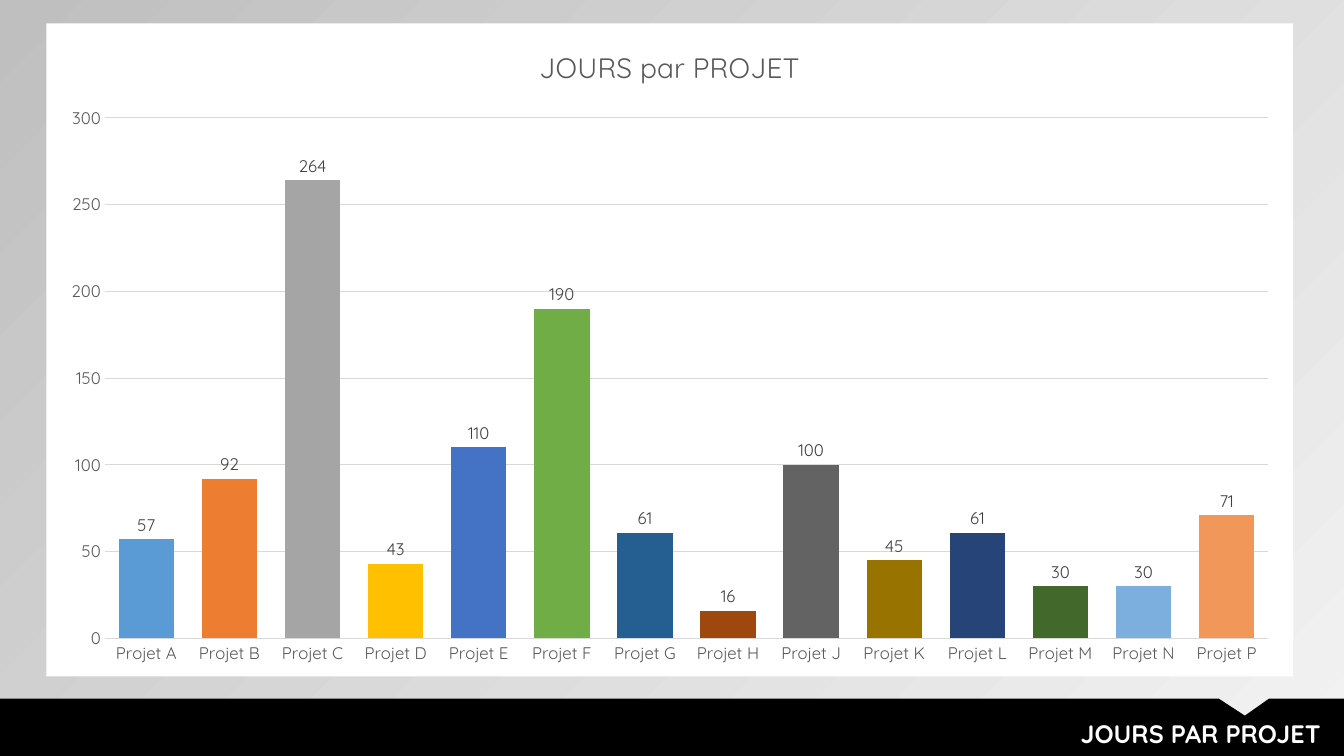
import pptx
import pptx.chart.data
import pptx.dml.color
import pptx.enum.chart
import pptx.enum.text
import pptx.oxml
import pptx.oxml.ns
import pptx.util

Pt = pptx.util.Pt

FONT = "Quicksand"
CHART_TITLE = "JOURS par PROJET"
FOOTER = "JOURS PAR PROJET"
PROJECTS = [
    ("Projet A", 57, "5B9BD5"),
    ("Projet B", 92, "ED7D31"),
    ("Projet C", 264, "A5A5A5"),
    ("Projet D", 43, "FFC000"),
    ("Projet E", 110, "4472C4"),
    ("Projet F", 190, "70AD47"),
    ("Projet G", 61, "255E91"),
    ("Projet H", 16, "9E480E"),
    ("Projet J", 100, "636363"),
    ("Projet K", 45, "997300"),
    ("Projet L", 61, "264478"),
    ("Projet M", 30, "43682B"),
    ("Projet N", 30, "7CAFDD"),
    ("Projet P", 71, "F1975A"),
]
COLORS = {
    "light": "F2F2F2", "dark": "BFBFBF", "band": "000000", "white": "FFFFFF",
    "axis": "595959", "grid": "D9D9D9", "label": "404040",
}
WIDTH, HEIGHT = 960, 540
BAND_TOP = 499
NOTCH = [(870.5, BAND_TOP), (889.2, 511.2), (906.5, BAND_TOP)]
CHART_BOX = (33.1, 16.6, 890.6, 466.6)
FOOTER_BOX = (298, 509.8, 652.4, 28.8)


def rgb(name):
    return pptx.dml.color.RGBColor.from_string(COLORS.get(name, name))


def set_font(font, size, color, bold=False):
    font.name, font.size, font.bold = FONT, Pt(size), bold
    font.color.rgb = rgb(color)


def set_line(line, color):
    line.color.rgb = rgb(color)
    line.width = Pt(0.75)


def add_background(slide):
    fill = slide.background.fill
    fill.gradient()
    fill.gradient_angle = 135
    for stop, position, color in zip(fill.gradient_stops, (0, 1), ("light", "dark")):
        stop.position = position
        stop.color.rgb = rgb(color)


def add_band(slide):
    """Draw the footer band with a notch in its top edge."""
    outline = NOTCH + [(WIDTH, BAND_TOP), (WIDTH, HEIGHT), (0, HEIGHT)]
    builder = slide.shapes.build_freeform(0, Pt(BAND_TOP))
    builder.add_line_segments([(Pt(x), Pt(y)) for x, y in outline], close=True)
    sp = builder.convert_to_shape()
    sp.shadow.inherit = False
    sp.fill.solid()
    sp.fill.fore_color.rgb = rgb("band")
    sp.line.fill.background()


def add_footer(slide):
    tf = slide.shapes.add_textbox(*map(Pt, FOOTER_BOX)).text_frame
    tf.word_wrap = True
    p = tf.paragraphs[0]
    p.text = FOOTER
    p.alignment = pptx.enum.text.PP_ALIGN.RIGHT
    set_font(p.runs[0].font, 18, "white", bold=True)


def fill_chart_area(chart, color):
    sp_pr = pptx.oxml.parse_xml(
        f'<c:spPr {pptx.oxml.ns.nsdecls("c", "a")}><a:solidFill>'
        f'<a:srgbClr val="{COLORS[color]}"/></a:solidFill>'
        '<a:ln><a:noFill/></a:ln></c:spPr>')
    chart._chartSpace.find(pptx.oxml.ns.qn("c:chart")).addnext(sp_pr)


def add_days_chart(slide):
    names, days, bar_colors = zip(*PROJECTS)
    data = pptx.chart.data.CategoryChartData()
    data.categories = names
    data.add_series("Jours", days)
    chart = slide.shapes.add_chart(
        pptx.enum.chart.XL_CHART_TYPE.COLUMN_CLUSTERED,
        *map(Pt, CHART_BOX), data).chart
    set_font(chart.font, 10, "band")
    fill_chart_area(chart, "white")
    chart.has_legend = False
    chart.has_title = True
    p = chart.chart_title.text_frame.paragraphs[0]
    p.text = CHART_TITLE
    set_font(p.runs[0].font, 20, "axis")
    chart.chart_title.include_in_layout = False

    for axis in (chart.category_axis, chart.value_axis):
        axis.major_tick_mark = pptx.enum.chart.XL_TICK_MARK.NONE
        axis.minor_tick_mark = pptx.enum.chart.XL_TICK_MARK.NONE
        set_font(axis.tick_labels.font, 12, "axis")
    set_line(chart.category_axis.format.line, "grid")
    value_axis = chart.value_axis
    value_axis.minimum_scale, value_axis.maximum_scale = 0, 300
    value_axis.major_unit = 50
    value_axis.format.line.fill.background()
    set_line(value_axis.major_gridlines.format.line, "grid")

    plot = chart.plots[0]
    plot.gap_width = 50
    plot.vary_by_categories = False
    plot.has_data_labels = True
    labels = plot.data_labels
    labels.show_value = True
    labels.position = pptx.enum.chart.XL_LABEL_POSITION.OUTSIDE_END
    set_font(labels.font, 12, "label")
    for i, color in enumerate(bar_colors):
        fill = plot.series[0].points[i].format.fill
        fill.solid()
        fill.fore_color.rgb = rgb(color)


def main():
    prs = pptx.Presentation()
    prs.slide_width, prs.slide_height = Pt(WIDTH), Pt(HEIGHT)
    slide = prs.slides.add_slide(prs.slide_layouts[6])
    add_background(slide)
    add_band(slide)
    add_footer(slide)
    add_days_chart(slide)
    prs.save("out.pptx")


if __name__ == "__main__":
    main()
